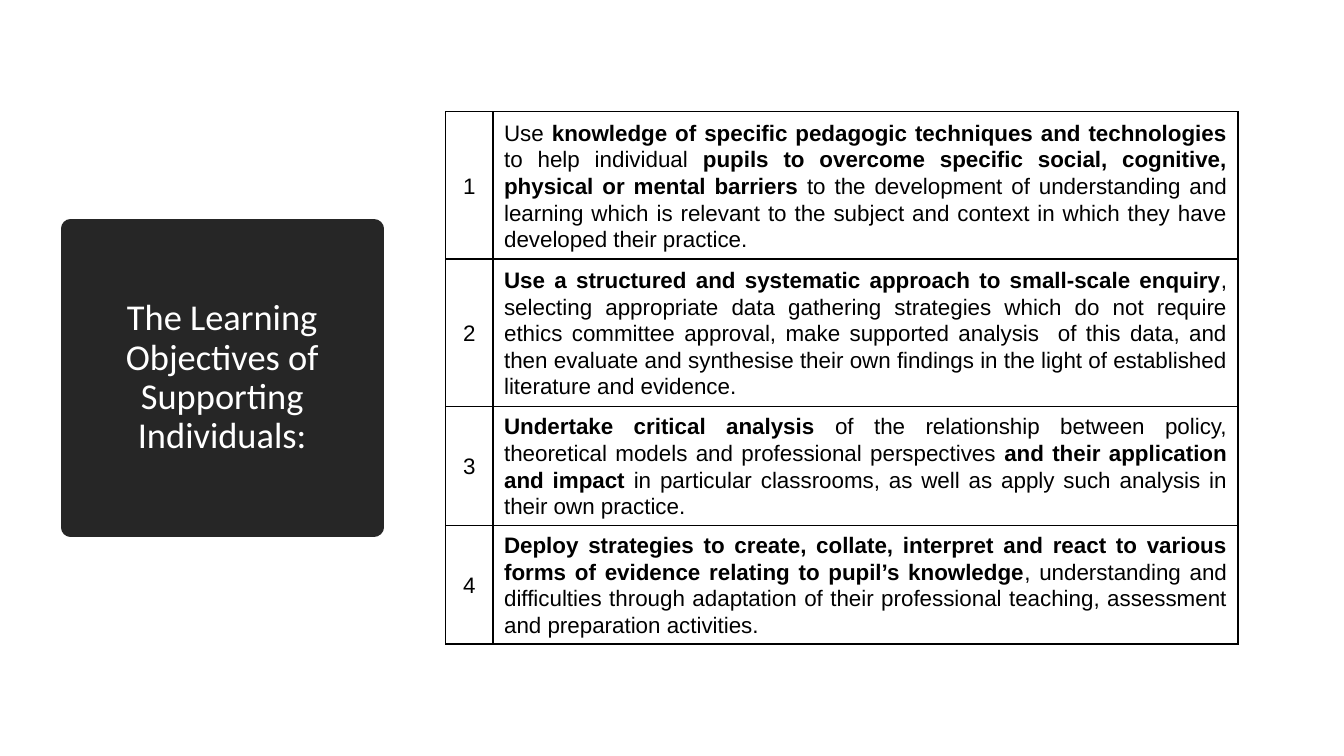
from lxml.etree import SubElement
from pptx import Presentation
from pptx.dml.color import RGBColor
from pptx.enum.text import MSO_ANCHOR as Anchor, PP_ALIGN as Align
from pptx.oxml.ns import qn
from pptx.util import Inches, Pt

TITLE = "The Learning Objectives of Supporting Individuals:"
OBJECTIVES = [
    [("Use ", False),
     ("knowledge of specific pedagogic techniques and technologies ", True),
     ("to help individual ", False),
     ("pupils to overcome specific social, cognitive, physical or mental barriers ", True),
     ("to the development of understanding and learning which is relevant to the subject "
      "and context in which they have developed their practice.", False)],
    [("Use a structured and systematic approach to small-scale enquiry", True),
     (", selecting appropriate data gathering strategies which do not require ethics "
      "committee approval, make supported analysis  of this data, and then evaluate and "
      "synthesise their own findings in the light of established literature and evidence.", False)],
    [("Undertake critical analysis ", True),
     ("of the relationship between policy, theoretical models and professional perspectives ", False),
     ("and their application and impact ", True),
     ("in particular classrooms, as well as apply such analysis in their own practice.", False)],
    [("Deploy strategies to create, collate, interpret and react to various forms of "
      "evidence relating to pupil’s knowledge", True),
     (", understanding and difficulties through adaptation of their professional teaching, "
      "assessment and preparation activities.", False)],
]

DARK = RGBColor(0x26, 0x26, 0x26)
WHITE = RGBColor(0xFF, 0xFF, 0xFF)
BLACK = RGBColor(0, 0, 0)

TITLE_BOX = {"left": 0.7, "top": 2.27, "width": 3.01, "height": 2.96}
TABLE_LEFT, TABLE_TOP = 4.42, 1.11
COLUMNS = [0.47, 7.39]
ROWS = [1.46, 1.46, 1.18, 1.18]
CELL_FORMAT = {
    "vertical_anchor": Anchor.MIDDLE,
    "margin_left": Inches(0.11), "margin_right": Inches(0.11),
    "margin_top": Inches(0.01), "margin_bottom": 0,
}
CELL_PARAGRAPH = {"line_spacing": 1.07, "space_before": Pt(2), "space_after": Pt(2)}
CELL_FONT = {"name": "Arial", "size": Pt(16)}
TITLE_FONT = {"name": "Calibri", "size": Pt(26), "bold": False}


def apply(target, values):
    for name, value in values.items():
        setattr(target, name, value)


def add_borders(cell):
    properties = cell._tc.get_or_add_tcPr()
    for side in ("lnL", "lnR", "lnT", "lnB"):
        line = SubElement(properties, qn(f"a:{side}"), w=str(Pt(1)))
        fill = SubElement(line, qn("a:solidFill"))
        SubElement(fill, qn("a:srgbClr"), val=str(BLACK))


def fill_cell(cell, runs, alignment):
    add_borders(cell)
    cell.fill.background()
    apply(cell, CELL_FORMAT)
    paragraph = cell.text_frame.paragraphs[0]
    apply(paragraph, {**CELL_PARAGRAPH, "alignment": alignment})
    for text, bold in runs:
        run = paragraph.add_run()
        run.text = text
        apply(run.font, {**CELL_FONT, "bold": bold})
        run.font.color.rgb = BLACK


def format_title(title):
    apply(title, {name: Inches(value) for name, value in TITLE_BOX.items()})
    geometry = SubElement(title._element.spPr, qn("a:prstGeom"), prst="ellipse")
    SubElement(geometry, qn("a:avLst"))
    title.fill.solid()
    title.fill.fore_color.rgb = DARK
    title.line.color.rgb = DARK
    title.line.width = Pt(13.75)
    title.text_frame.text = TITLE
    apply(title.text_frame, {"vertical_anchor": Anchor.MIDDLE, "word_wrap": True})
    paragraph = title.text_frame.paragraphs[0]
    apply(paragraph, {"alignment": Align.CENTER, "line_spacing": 0.9})
    font = paragraph.runs[0].font
    apply(font, TITLE_FONT)
    font.color.rgb = WHITE


def add_objectives(slide):
    table = slide.shapes.add_table(
        len(ROWS), len(COLUMNS), Inches(TABLE_LEFT), Inches(TABLE_TOP),
        Inches(sum(COLUMNS)), Inches(sum(ROWS))).table
    apply(table, {"first_row": False, "horz_banding": False})
    for column, width in zip(table.columns, COLUMNS):
        column.width = Inches(width)
    for index, (height, runs) in enumerate(zip(ROWS, OBJECTIVES)):
        table.rows[index].height = Inches(height)
        fill_cell(table.cell(index, 0), [(str(index + 1), False)], Align.CENTER)
        fill_cell(table.cell(index, 1), runs, Align.JUSTIFY)


def main():
    presentation = Presentation()
    apply(presentation, {"slide_width": Inches(13.33), "slide_height": Inches(7.5)})
    slide = presentation.slides.add_slide(presentation.slide_layouts[5])
    format_title(slide.shapes.title)
    add_objectives(slide)
    presentation.save("out.pptx")


if __name__ == "__main__":
    main()
